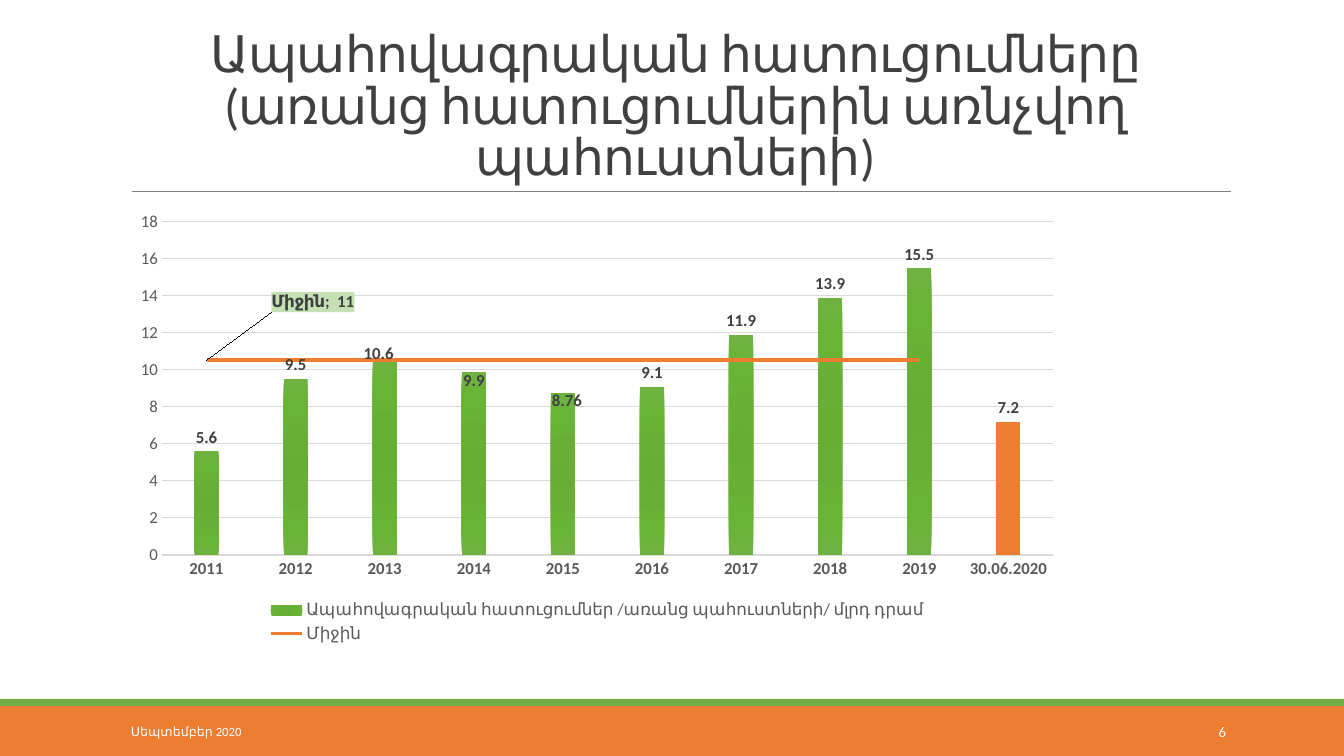
from copy import deepcopy

from lxml import etree
from pptx import Presentation
from pptx.chart.data import CategoryChartData
from pptx.dml.color import RGBColor
from pptx.enum.chart import XL_CHART_TYPE, XL_LABEL_POSITION, XL_LEGEND_POSITION, XL_MARKER_STYLE, XL_TICK_MARK
from pptx.enum.shapes import MSO_CONNECTOR, MSO_SHAPE
from pptx.enum.text import MSO_ANCHOR, MSO_AUTO_SIZE, PP_ALIGN
from pptx.oxml import parse_xml
from pptx.oxml.ns import nsdecls, qn
from pptx.util import Pt

SLIDE_WIDTH, SLIDE_HEIGHT = 1344, 756
PX = 12192000 / SLIDE_WIDTH
FONT = "Calibri"
ORANGE = RGBColor(0xED, 0x7D, 0x31)
GREEN = RGBColor(0x70, 0xAD, 0x47)
WHITE = RGBColor(0xFF, 0xFF, 0xFF)
RULE_GRAY = RGBColor(0x80, 0x80, 0x80)
GRID_GRAY = RGBColor(0xD9, 0xD9, 0xD9)
DARK = RGBColor(0x40, 0x40, 0x40)
AXIS_GRAY = RGBColor(0x59, 0x59, 0x59)
CALLOUT_GREEN = RGBColor(0xC5, 0xE0, 0xB4)

TITLE = "Ապահովագրական հատուցումները (առանց հատուցումներին առնչվող պահուստների)"
TITLE_BOX = (121, 31, 1109, 160)
BANDS = [((0, 706, SLIDE_WIDTH, 50), ORANGE), ((0, 699, SLIDE_WIDTH, 7), GREEN)]
RULE = (132, 191, 1231, 191)
FOOTERS = [
    ("Սեպտեմբեր 2020", (121, 712, 272, 40), 9, PP_ALIGN.LEFT),
    ("6", (1092, 712, 144, 40), 10.5, PP_ALIGN.RIGHT),
]
PAYMENTS = {
    "2011": 5.6, "2012": 9.5, "2013": 10.6, "2014": 9.9, "2015": 8.76,
    "2016": 9.1, "2017": 11.9, "2018": 13.9, "2019": 15.5, "30.06.2020": 7.2,
}
PAYMENTS_NAME = "Ապահովագրական հատուցումներ /առանց պահուստների/ մլրդ դրամ"
AVERAGE_NAME, AVERAGE = "Միջին", 10.53
CHART_BOX = (121, 204, 951, 444)
PLOT_BOX = (162, 222, 891, 333)
LEGEND_BOX = (265, 597, 665, 50)
GRADIENT = [(0, "66AF34"), (34, "67AF37"), (70, "68B435"), (100, "6FB242")]
PAYMENT_LABEL_SHIFTS = {2: (-6, 9), 3: (0, 23), 4: (4, 22)}
AVERAGE_LABEL_SHIFT = (61, -58)


def emu(lengths):
    """Turn pixel lengths into EMU."""
    return [round(length * PX) for length in lengths]


def apply(target, values):
    """Set attributes of an object from a dict."""
    for name, value in values.items():
        setattr(target, name, value)


def style_font(font, size, color, bold=False):
    """Format a font."""
    apply(font, {"name": FONT, "size": Pt(size), "bold": bold})
    font.color.rgb = color


def style_line(line, color, width):
    """Format a line."""
    line.color.rgb = color
    line.width = Pt(width)


def remove_children(element, tag):
    """Remove every child with a tag."""
    for child in element.findall(qn(tag)):
        element.remove(child)


def layout_xml(fractions, inner=False, absolute=True):
    """Build a manual chart layout."""
    target = '<c:layoutTarget val="inner"/>' if inner else ""
    modes = '<c:xMode val="edge"/><c:yMode val="edge"/>' if absolute else ""
    places = "".join(f'<c:{key} val="{value:.4f}"/>' for key, value in zip("xywh", fractions))
    return f"<c:layout {nsdecls('c')}><c:manualLayout>{target}{modes}{places}</c:manualLayout></c:layout>"


def box_layout(box, inner=False):
    """Place a slide box within the chart."""
    left, top, width, height = CHART_BOX
    fractions = ((box[0] - left) / width, (box[1] - top) / height, box[2] / width, box[3] / height)
    return parse_xml(layout_xml(fractions, inner))


def shift_label(labels, index, shift, position, series_name=False):
    """Add a moved data label for one point."""
    fractions = (shift[0] / CHART_BOX[2], shift[1] / CHART_BOX[3])
    number_format = '<c:numFmt formatCode="&quot; &quot;0" sourceLinked="0"/>' if series_name else ""
    fill = f'<c:spPr><a:solidFill><a:srgbClr val="{CALLOUT_GREEN}"/></a:solidFill></c:spPr>' if series_name else ""
    separator = "<c:separator>; </c:separator>" if series_name else ""
    label = parse_xml(
        f'<c:dLbl {nsdecls("c", "a")}><c:idx val="{index}"/>{layout_xml(fractions, absolute=False)}'
        f'{number_format}{fill}<c:dLblPos val="{position}"/><c:showLegendKey val="0"/><c:showVal val="1"/>'
        f'<c:showCatName val="0"/><c:showSerName val="{int(series_name)}"/><c:showPercent val="0"/>'
        f'<c:showBubbleSize val="0"/>{separator}</c:dLbl>'
    )
    label.find(qn("c:dLblPos")).addprevious(deepcopy(labels.find(qn("c:txPr"))))
    labels.insert(len(labels.findall(qn("c:dLbl"))), label)


def add_title(slide):
    """Fill and format the title."""
    title = slide.shapes.title
    apply(title, dict(zip(("left", "top", "width", "height"), emu(TITLE_BOX))))
    frame = title.text_frame
    apply(frame, {"text": TITLE, "word_wrap": True, "auto_size": MSO_AUTO_SIZE.NONE, "vertical_anchor": MSO_ANCHOR.BOTTOM})
    paragraph = frame.paragraphs[0]
    apply(paragraph, {"alignment": PP_ALIGN.CENTER, "line_spacing": 0.85})
    run = paragraph.runs[0]
    style_font(run.font, 36, DARK)
    run._r.get_or_add_rPr().set("spc", "-50")


def add_frame(slide):
    """Draw the bands, the rule and the footers."""
    for box, color in BANDS:
        band = slide.shapes.add_shape(MSO_SHAPE.RECTANGLE, *emu(box))
        band.shadow.inherit = False
        band.fill.solid()
        band.fill.fore_color.rgb = color
        band.line.fill.background()
    rule = slide.shapes.add_connector(MSO_CONNECTOR.STRAIGHT, *emu(RULE))
    style_line(rule.line, RULE_GRAY, 0.5)
    etree.SubElement(rule._element.spPr, qn("a:effectLst"))
    for text, box, size, alignment in FOOTERS:
        frame = slide.shapes.add_textbox(*emu(box)).text_frame
        apply(frame, {"text": text, "word_wrap": True, "vertical_anchor": MSO_ANCHOR.MIDDLE})
        frame.paragraphs[0].alignment = alignment
        style_font(frame.paragraphs[0].runs[0].font, size, WHITE)


def split_average(chart):
    """Move the second series to a line plot on the same axes."""
    bars = chart.plots[0]._element
    average = bars.findall(qn("c:ser"))[1]
    remove_children(average, "c:invertIfNegative")
    lines = parse_xml(
        f'<c:lineChart {nsdecls("c")}><c:grouping val="standard"/><c:varyColors val="0"/>'
        '<c:marker val="1"/></c:lineChart>'
    )
    lines.insert(2, average)
    lines.extend([deepcopy(axis) for axis in bars.findall(qn("c:axId"))])
    bars.addnext(lines)


def format_payments(plot):
    """Format the columns and their labels."""
    apply(plot, {"gap_width": 269, "overlap": -25, "vary_by_categories": False})
    series = plot.series[0]
    series.invert_if_negative = False
    stops = "".join(f'<a:gs pos="{place * 1000}"><a:srgbClr val="{color}"/></a:gs>' for place, color in GRADIENT)
    series._element.get_or_add_spPr().append(parse_xml(
        f'<a:gradFill {nsdecls("a")}><a:gsLst>{stops}</a:gsLst><a:path path="circle">'
        '<a:fillToRect l="100000" t="100000" r="100000" b="100000"/></a:path></a:gradFill>'
    ))
    latest = series.points[len(PAYMENTS) - 1].format.fill
    latest.solid()
    latest.fore_color.rgb = ORANGE
    labels = series.data_labels
    apply(labels, {"show_value": True, "position": XL_LABEL_POSITION.OUTSIDE_END})
    style_font(labels.font, 12, DARK, True)
    for index, shift in PAYMENT_LABEL_SHIFTS.items():
        shift_label(labels._element, index, shift, "outEnd")


def format_average(series):
    """Format the average line and its callout."""
    series.smooth = False
    series.marker.style = XL_MARKER_STYLE.NONE
    style_line(series.format.line, ORANGE, 2.75)
    labels = series.data_labels
    labels.show_value = False
    style_font(labels.font, 12, DARK, True)
    shift_label(labels._element, 0, AVERAGE_LABEL_SHIFT, "r", True)
    labels._element.append(parse_xml(
        f'<c:extLst {nsdecls("c")}><c:ext uri="{{CE6537A1-D6FC-4f65-9D91-7224C49458BB}}" '
        'xmlns:c15="http://schemas.microsoft.com/office/drawing/2012/chart">'
        '<c15:showLeaderLines val="1"/></c:ext></c:extLst>'
    ))


def add_payments_chart(slide):
    """Add the column chart with its average line."""
    data = CategoryChartData()
    data.categories = list(PAYMENTS)
    data.add_series(PAYMENTS_NAME, list(PAYMENTS.values()))
    data.add_series(AVERAGE_NAME, [AVERAGE] * (len(PAYMENTS) - 1) + [None])
    chart = slide.shapes.add_chart(XL_CHART_TYPE.COLUMN_CLUSTERED, *emu(CHART_BOX), data).chart
    apply(chart, {"has_title": False, "has_legend": True})
    style_font(chart.font, 10, RGBColor(0, 0, 0))
    split_average(chart)
    format_payments(chart.plots[0])
    format_average(chart.plots[1].series[0])
    for axis, bold in ((chart.category_axis, True), (chart.value_axis, False)):
        apply(axis, {"major_tick_mark": XL_TICK_MARK.NONE, "minor_tick_mark": XL_TICK_MARK.NONE})
        style_font(axis.tick_labels.font, 12, AXIS_GRAY, bold)
    style_line(chart.category_axis.format.line, GRID_GRAY, 1)
    apply(chart.value_axis, {"minimum_scale": 0, "maximum_scale": 18, "major_unit": 2})
    chart.value_axis.format.line.fill.background()
    style_line(chart.value_axis.major_gridlines.format.line, GRID_GRAY, 0.75)
    apply(chart.legend, {"position": XL_LEGEND_POSITION.BOTTOM, "include_in_layout": False})
    style_font(chart.legend.font, 12, AXIS_GRAY)
    legend, plot_area = chart.legend._element, chart._chartSpace.chart.plotArea
    for part in (legend, plot_area):
        remove_children(part, "c:layout")
    legend.insert(1, box_layout(LEGEND_BOX))
    plot_area.insert(0, box_layout(PLOT_BOX, True))


presentation = Presentation()
presentation.slide_width, presentation.slide_height = emu((SLIDE_WIDTH, SLIDE_HEIGHT))
slide = presentation.slides.add_slide(presentation.slide_layouts[5])
add_frame(slide)
add_title(slide)
add_payments_chart(slide)
presentation.save("out.pptx")
